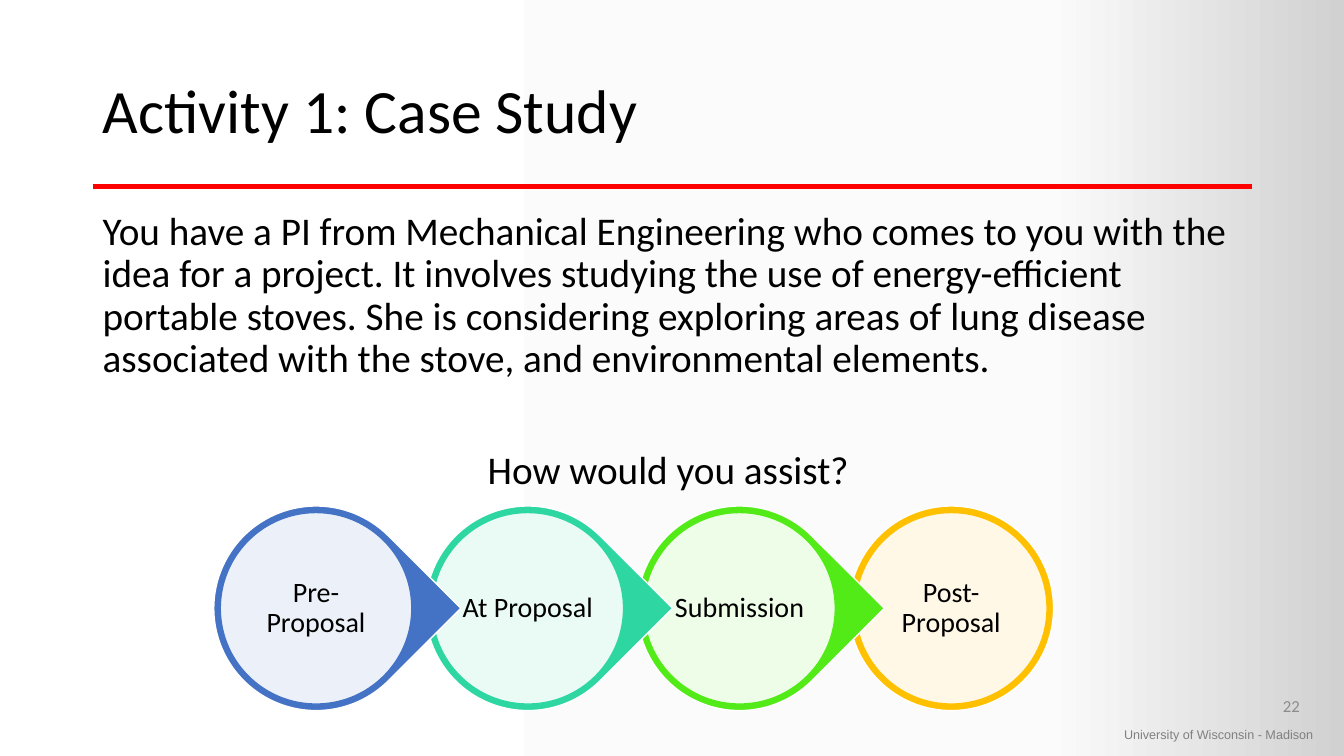
from copy import deepcopy

from lxml.etree import SubElement
from pptx import Presentation
from pptx.dml.color import RGBColor
from pptx.enum.shapes import MSO_CONNECTOR, MSO_SHAPE
from pptx.enum.text import MSO_ANCHOR, PP_ALIGN
from pptx.oxml.ns import qn
from pptx.util import Inches, Pt


def color(hex_string):
    return RGBColor.from_string(hex_string)


def write(shape, paragraphs, size, align=PP_ALIGN.LEFT, anchor=MSO_ANCHOR.TOP,
          font="Calibri", ink="000000", spacing=0.9):
    frame = shape.text_frame
    frame.text = "\n".join(paragraphs)
    frame.word_wrap = True
    frame.vertical_anchor = anchor
    for paragraph in frame.paragraphs:
        paragraph.alignment = align
        paragraph.line_spacing = spacing
        for run in paragraph.runs:
            run.font.name = font
            run.font.size = Pt(size)
            run.font.color.rgb = color(ink)


presentation = Presentation()
presentation.slide_width = Inches(13.33)
presentation.slide_height = Inches(7.5)
slide = presentation.slides.add_slide(presentation.slide_layouts[5])

# Background: white fading to grey at the right
background = slide.background.fill
background.gradient()
background.gradient_angle = 0
stop_list = slide.background._cSld.find(".//" + qn("a:gsLst"))
stop_list.append(deepcopy(stop_list[-1]))
stops = [(0, "FFFFFF"), (0.78, "FBFBFB"), (1, "D1D1D1")]
for stop, (position, shade) in zip(background.gradient_stops, stops):
    stop.position = position
    stop.color.rgb = color(shade)

# Title and red rule
title = slide.shapes.title
title.left, title.top = Inches(0.92), Inches(0.4)
title.width, title.height = Inches(11.5), Inches(1.45)
write(title, ["Activity 1: Case Study"], 44, anchor=MSO_ANCHOR.MIDDLE)

rule = slide.shapes.add_connector(
    MSO_CONNECTOR.STRAIGHT, Inches(0.92), Inches(1.85), Inches(12.42), Inches(1.85))
rule.line.color.rgb = color("FF0000")
rule.line.width = Pt(3)
SubElement(rule._element.spPr, qn("a:effectLst"))

# Case description and question
case = slide.shapes.add_textbox(Inches(0.92), Inches(2.05), Inches(11.5), Inches(2.9))
write(case, [
    "You have a PI from Mechanical Engineering who comes to you with the idea for a "
    "project. It involves studying the use of energy-efficient portable stoves. She is "
    "considering exploring areas of lung disease associated with the stove, and "
    "environmental elements.",
    "How would you assist? ",
], 28)
question = case.text_frame.paragraphs[1]
question.alignment = PP_ALIGN.CENTER
question.space_before = Pt(50)

# Footer: slide number and university
number = slide.shapes.add_textbox(Inches(9.99), Inches(6.8), Inches(3), Inches(0.4))
write(number, ["22"], 12, PP_ALIGN.RIGHT, MSO_ANCHOR.MIDDLE, ink="8C8C8C", spacing=1)
university = slide.shapes.add_textbox(Inches(11.05), Inches(7.16), Inches(2.2), Inches(0.25))
write(university, ["University of Wisconsin - Madison"], 9, font="Arial", ink="808080",
      spacing=1)

# Process stages, drawn from last to first so each point overlaps the next stage
stages = [("Pre-Proposal", "4472C4"), ("At Proposal", "2ED7A1"),
          ("Submission", "53EB17"), ("Post-Proposal", "FFC000")]
first_left, stage_top, pitch = 2.12, 5.02, 2.1
outer_size, inner_size = 2.03, 1.9
margin = (outer_size - inner_size) / 2
for index, (label, accent) in reversed(list(enumerate(stages))):
    left = first_left + index * pitch
    is_last = index == len(stages) - 1
    outer = slide.shapes.add_shape(
        MSO_SHAPE.OVAL if is_last else MSO_SHAPE.TEAR,
        Inches(left), Inches(stage_top), Inches(outer_size), Inches(outer_size))
    outer.rotation = 0 if is_last else 45
    inner = slide.shapes.add_shape(
        MSO_SHAPE.OVAL, Inches(left + margin), Inches(stage_top + margin),
        Inches(inner_size), Inches(inner_size))
    for shape, fill, line in [(outer, accent, "FFFFFF"), (inner, "FFFFFF", accent)]:
        shape.shadow.inherit = False
        shape.fill.solid()
        shape.fill.fore_color.rgb = color(fill)
        shape.line.color.rgb = color(line)
        shape.line.width = Pt(1)
    # White at 90% opacity gives the pale tint of the accent
    white = inner._element.spPr.find(qn("a:solidFill"))[0]
    SubElement(white, qn("a:alpha"), val="90000")
    frame = inner.text_frame
    frame.margin_left = frame.margin_right = frame.margin_top = frame.margin_bottom = 0
    write(inner, [label], 20, PP_ALIGN.CENTER, MSO_ANCHOR.MIDDLE)

presentation.save("out.pptx")
